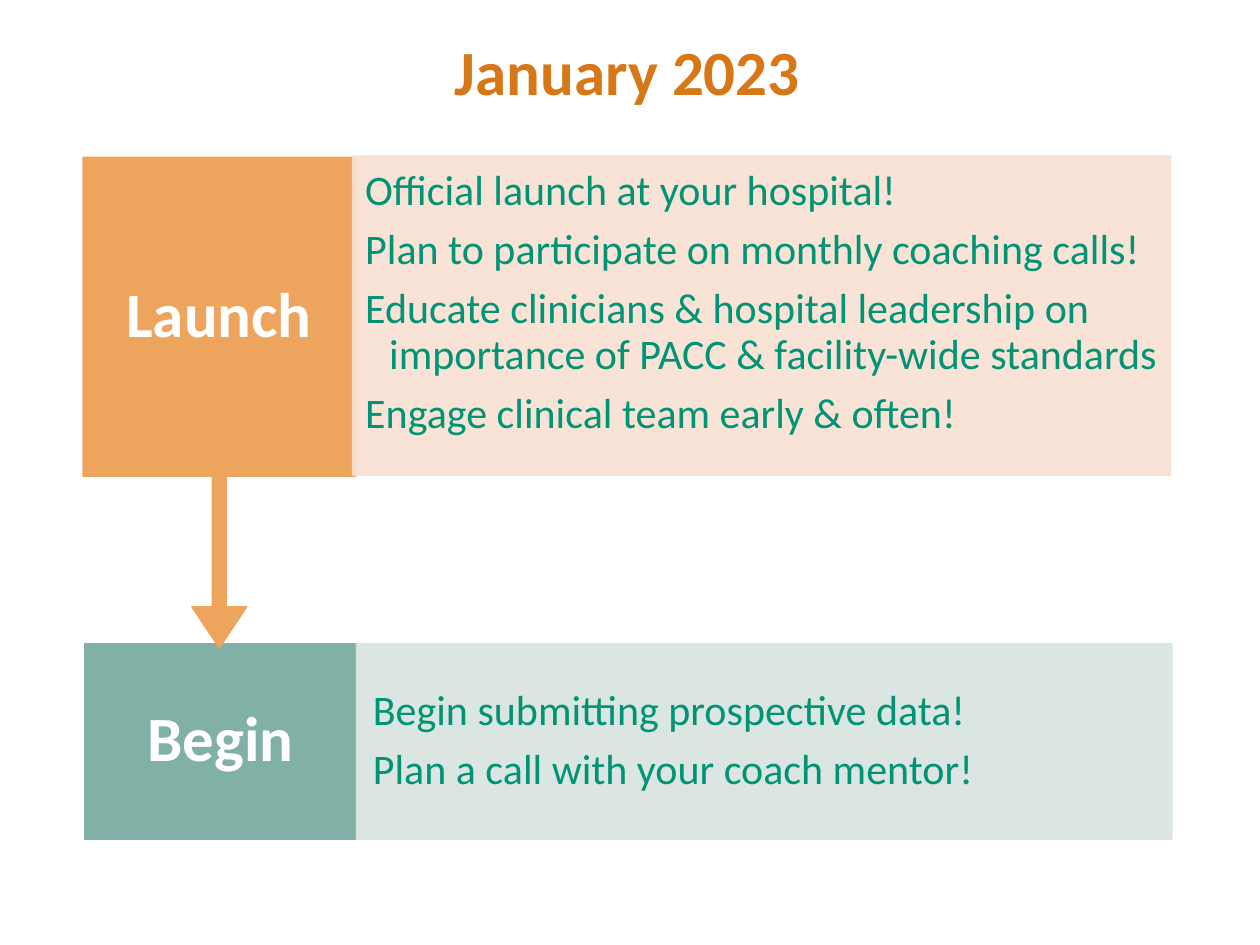
"""Build the January 2023 launch slide."""
from dataclasses import dataclass

from lxml.etree import SubElement
from pptx import Presentation
from pptx.dml.color import RGBColor
from pptx.enum.shapes import MSO_SHAPE
from pptx.enum.text import MSO_ANCHOR, PP_ALIGN
from pptx.oxml.ns import qn
from pptx.util import Inches, Pt


@dataclass(frozen=True)
class Theme:
    font: str = "Calibri"
    title: str = "D67718"
    body: str = "009374"
    label: str = "FFFFFF"
    launch: str = "EDA55D"
    launch_panel: str = "F8E1D2"
    begin: str = "80B0A6"
    begin_panel: str = "D8E4E1"
    heading_size: int = 36
    body_size: int = 24
    panel_opacity: int = 90


@dataclass(frozen=True)
class Area:
    left: float
    top: float
    width: float
    height: float

    def lengths(self) -> tuple:
        return tuple(Inches(n) for n in (self.left, self.top, self.width, self.height))


@dataclass(frozen=True)
class Line:
    text: str
    hanging: float = 0


@dataclass(frozen=True)
class Panel:
    area: Area
    color: str
    lines: tuple
    margins: tuple
    anchor: MSO_ANCHOR


THEME = Theme()
LABEL_MARGINS = (0.15, 0.28, 0.15, 0.28)
LAUNCH_LABEL = Area(0.66, 1.25, 2.16, 2.53)
LAUNCH_ARROW = Area(0.66, 1.25, 2.16, 3.89)
BEGIN_LABEL = Area(0.67, 5.11, 2.16, 1.55)

BEGIN_PANEL = Panel(
    Area(2.83, 5.11, 6.47, 1.55),
    THEME.begin_panel,
    (Line("Begin submitting prospective data!"), Line("Plan a call with your coach mentor!")),
    (0.13, 0.33, 0.13, 0.33),
    MSO_ANCHOR.MIDDLE,
)
LAUNCH_PANEL = Panel(
    Area(2.8, 1.24, 6.49, 2.53),
    THEME.launch_panel,
    (
        Line("Official launch at your hospital!"),
        Line("Plan to participate on monthly coaching calls!"),
        Line("Educate clinicians & hospital leadership on importance of PACC & facility-wide standards", 0.19),
        Line("Engage clinical team early & often!", 0.19),
    ),
    (0.1, 0.1, 0.1, 0),
    MSO_ANCHOR.TOP,
)


def add_block(page, kind: MSO_SHAPE, area: Area, color: str, opacity: int = 100):
    block = page.shapes.add_shape(kind, *area.lengths())
    block.shadow.inherit = False
    block.line.width = Pt(1)
    for fill in (block.fill, block.line.fill):
        fill.solid()
        fill.fore_color.rgb = RGBColor.from_string(color)
    if opacity < 100:
        for tone in block._element.spPr.iter(qn("a:srgbClr")):
            SubElement(tone, qn("a:alpha"), val=str(opacity * 1000))
    return block


def set_frame(box, margins: tuple, anchor: MSO_ANCHOR):
    frame = box.text_frame
    frame.word_wrap = True
    frame.vertical_anchor = anchor
    frame.margin_left, frame.margin_top, frame.margin_right, frame.margin_bottom = map(Inches, margins)
    return frame


def add_span(para, text: str, size: int, color: str, bold: bool = False) -> None:
    para.line_spacing = 0.9
    span = para.add_run()
    span.text = text
    span.font.name = THEME.font
    span.font.size = Pt(size)
    span.font.bold = bold
    span.font.color.rgb = RGBColor.from_string(color)


def write_heading(box, text: str, color: str, margins: tuple, anchor: MSO_ANCHOR) -> None:
    para = set_frame(box, margins, anchor).paragraphs[0]
    para.alignment = PP_ALIGN.CENTER
    add_span(para, text, THEME.heading_size, color, bold=True)


def add_panel(page, panel: Panel) -> None:
    block = add_block(page, MSO_SHAPE.RECTANGLE, panel.area, panel.color, THEME.panel_opacity)
    frame = set_frame(block, panel.margins, panel.anchor)
    for index, line in enumerate(panel.lines):
        para = frame.add_paragraph() if index else frame.paragraphs[0]
        para.alignment = PP_ALIGN.LEFT
        para.space_after = Pt(8)
        if line.hanging:
            properties = para._p.get_or_add_pPr()
            properties.set("marL", str(Inches(line.hanging)))
            properties.set("indent", str(-Inches(line.hanging)))
        add_span(para, line.text, THEME.body_size, THEME.body)


def main() -> None:
    deck = Presentation()
    deck.slide_width, deck.slide_height = Inches(10), Inches(7.5)
    page = deck.slides.add_slide(deck.slide_layouts[6])

    title = page.shapes.add_textbox(*Area(0.67, 0.16, 8.62, 0.76).lengths())
    write_heading(title, "January 2023", THEME.title, (0.1, 0.05, 0.1, 0.05), MSO_ANCHOR.BOTTOM)

    begin = add_block(page, MSO_SHAPE.RECTANGLE, BEGIN_LABEL, THEME.begin)
    write_heading(begin, "Begin", THEME.label, LABEL_MARGINS, MSO_ANCHOR.MIDDLE)
    add_panel(page, BEGIN_PANEL)

    arrow = add_block(page, MSO_SHAPE.UP_ARROW_CALLOUT, LAUNCH_ARROW, THEME.launch)
    arrow.rotation = 180
    for index, value in enumerate((0.05, 0.1, 0.15, 0.65)):
        arrow.adjustments[index] = value
    launch = page.shapes.add_textbox(*LAUNCH_LABEL.lengths())
    write_heading(launch, "Launch", THEME.label, LABEL_MARGINS, MSO_ANCHOR.MIDDLE)
    add_panel(page, LAUNCH_PANEL)

    deck.save("out.pptx")


if __name__ == "__main__":
    main()
